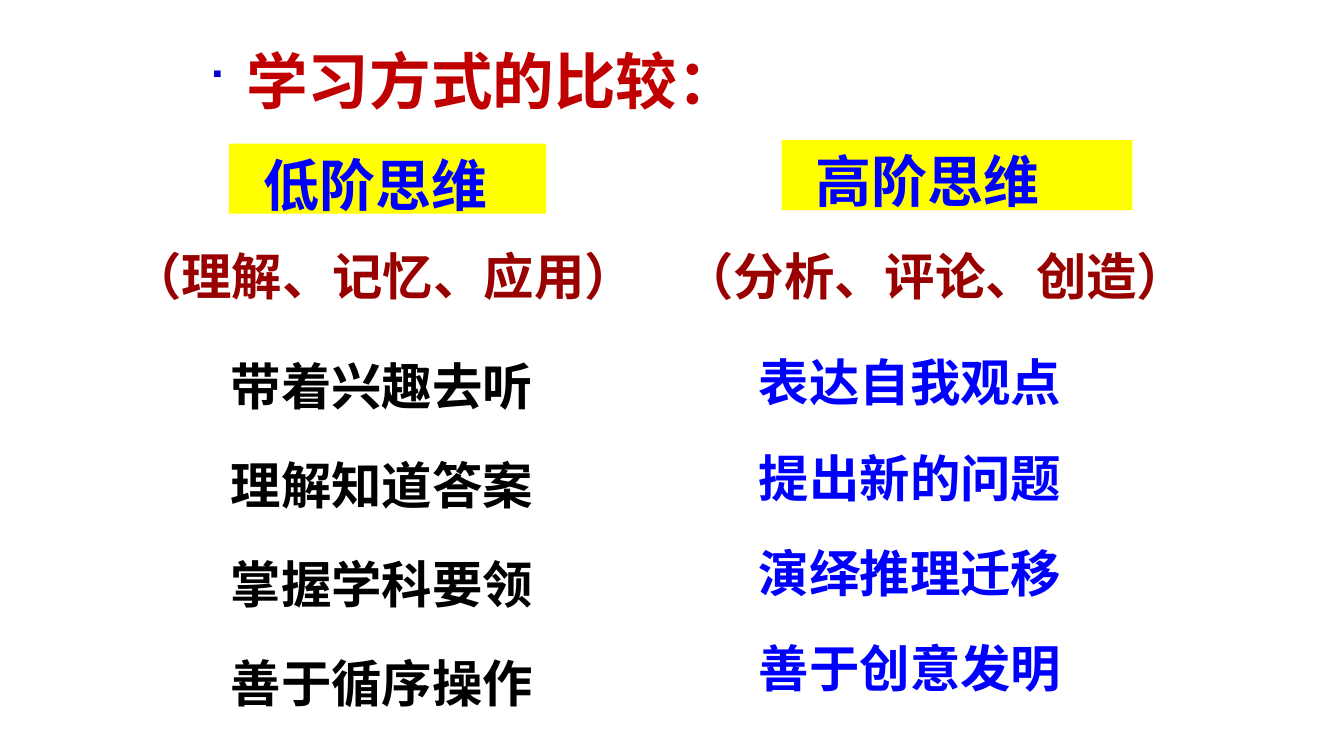
from lxml import etree
from pptx import Presentation
from pptx.dml.color import RGBColor
from pptx.enum.shapes import MSO_SHAPE
from pptx.enum.text import MSO_ANCHOR, PP_ALIGN
from pptx.oxml.ns import qn
from pptx.util import Pt

PX = 9144  # 100 px to the inch
FONT = "Noto Sans CJK SC"
RECTANGLE = MSO_SHAPE.RECTANGLE
TOP, LEFT = MSO_ANCHOR.TOP, PP_ALIGN.LEFT
BLUE, DARK_RED = "0000FF", "990000"


def color(hex_value):
    return RGBColor.from_string(hex_value)


def write(lines, x, y, w, h, size=72, ink=BLUE, fill=None, indent=0,
          spacing=None, before=None, bullet=None):
    box = (x * PX, y * PX, w * PX, h * PX)
    if fill:
        holder = slide.shapes.add_shape(RECTANGLE, *box)
        holder.shadow.inherit = False
        holder.fill.solid()
        holder.fill.fore_color.rgb = color(fill)
        holder.line.fill.background()
    else:
        holder = slide.shapes.add_textbox(*box)
    frame = holder.text_frame
    frame.word_wrap = True
    frame.vertical_anchor = TOP
    frame.margin_left = frame.margin_right = 23 * PX
    frame.margin_top = frame.margin_bottom = 13 * PX
    frame.text = "\n".join(lines)
    for paragraph in frame.paragraphs:
        paragraph.alignment = LEFT
        if spacing:
            paragraph.line_spacing = spacing
        if before:
            paragraph.space_before = Pt(before)
        properties = paragraph._p.get_or_add_pPr()
        properties.set("marL", str(indent * PX))
        if bullet:
            properties.set("indent", str(-indent * PX))
            bullet_color = etree.SubElement(properties, qn("a:buClr"))
            etree.SubElement(bullet_color, qn("a:srgbClr"), val=bullet)
            etree.SubElement(properties, qn("a:buSzPct"), val="73000")
            etree.SubElement(properties, qn("a:buFont"), typeface="Wingdings")
            etree.SubElement(properties, qn("a:buChar"), char="■")
        run = paragraph.runs[0]
        run.font.size = Pt(size)
        run.font.bold = True
        run.font.name = FONT
        run.font.color.rgb = color(ink)
        etree.SubElement(run.font._element, qn("a:ea"), typeface=FONT)


prs = Presentation()
prs.slide_width, prs.slide_height = 2667 * PX, 1500 * PX
slide = prs.slides.add_slide(prs.slide_layouts[6])

# Ways of learning under each kind of thinking
write(["带着兴趣去听", "理解知道答案", "掌握学科要领", "善于循序操作"],
      435, 632, 1032, 868, ink="000000", spacing=1.5, before=11.7)
write(["表达自我观点", "提出新的问题", "演绎推理迁移", "善于创意发明"],
      1483, 624, 1032, 868, spacing=1.5, before=6.7)

# Mental activities
for activities, x in (("（理解、记忆、应用）", 237), ("（分析、评论、创造）", 1333)):
    write([activities], x, 474, 1257, 249, ink=DARK_RED)

# Yellow headings
for thinking, x, y, w in (("低阶思维", 454, 285, 630), ("高阶思维", 1551, 278, 696)):
    write([thinking], x, y, w, 139, size=80, fill="FFFF00", indent=45)

# Title
write(["学习方式的比较："], 388, 73, 2200, 266, size=88, ink="C00000",
      indent=78, bullet="0000CC")

prs.save("out.pptx")
